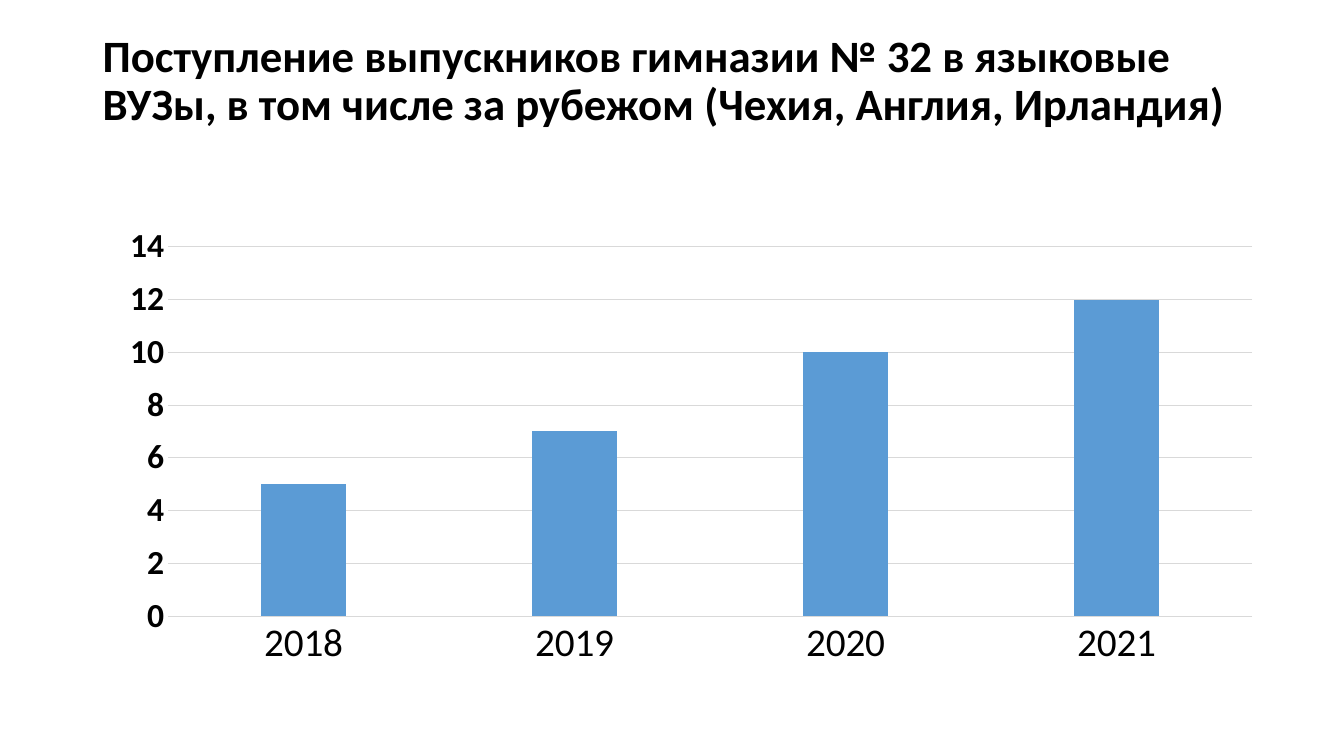
from lxml.etree import SubElement
from pptx import Presentation
from pptx.chart.data import CategoryChartData
from pptx.dml.color import RGBColor
from pptx.enum.chart import XL_CHART_TYPE, XL_TICK_MARK
from pptx.enum.text import MSO_ANCHOR
from pptx.oxml.ns import qn
from pptx.util import Inches, Pt

BLACK = RGBColor(0x00, 0x00, 0x00)
GRID_GREY = RGBColor(0xD9, 0xD9, 0xD9)
BAR_BLUE = RGBColor(0x5B, 0x9B, 0xD5)

TITLE = ("Поступление выпускников гимназии № 32 в языковые ВУЗы, "
         "в том числе за рубежом (Чехия, Англия, Ирландия)")
ADMISSIONS = {"2018": 5, "2019": 7, "2020": 10, "2021": 12}
PLOT_AREA = {"x": 0.065, "y": 0.094, "w": 0.935, "h": 0.769}


class SlideBuilder:
    """Holds the style and the current slide; boxes are shares of its size."""

    font_name = "Calibri"

    def __init__(self, prs):
        self.width, self.height = prs.slide_width, prs.slide_height
        self.s = prs.slides.add_slide(prs.slide_layouts[6])

    def place(self, x, y, w, h):
        return (int(x * self.width), int(y * self.height),
                int(w * self.width), int(h * self.height))

    def style(self, font, size, bold=False):
        font.name = self.font_name
        font.size = Pt(size)
        font.bold = bold
        font.color.rgb = BLACK

    def title(self, text, box):
        tf = self.s.shapes.add_textbox(*self.place(*box)).text_frame
        tf.word_wrap = True
        tf.vertical_anchor = MSO_ANCHOR.MIDDLE
        p = tf.paragraphs[0]
        p.text = text
        p.line_spacing = 0.9
        self.style(p.font, 32, bold=True)

    def column_chart(self, values, box):
        data = CategoryChartData()
        data.categories = list(values)
        data.add_series("Series 1", list(values.values()))
        chart = self.s.shapes.add_chart(
            XL_CHART_TYPE.COLUMN_CLUSTERED, *self.place(*box), data).chart
        chart.has_title = False
        chart.has_legend = False
        self.style(chart.font, 10)

        plot = chart.plots[0]
        plot.gap_width = 219
        plot.overlap = -27
        plot.vary_by_categories = False
        fill = plot.series[0].format.fill
        fill.solid()
        fill.fore_color.rgb = BAR_BLUE

        years, counts = chart.category_axis, chart.value_axis
        self.axis(years, 28)
        self.axis(counts, 24, bold=True)
        self.grey_line(years.format.line)
        counts.format.line.fill.background()
        counts.minimum_scale, counts.maximum_scale = 0, 14
        counts.major_unit = 2
        counts.has_major_gridlines = True
        self.grey_line(counts.major_gridlines.format.line)
        self.fix_plot_area(chart)

    def axis(self, axis, size, bold=False):
        axis.major_tick_mark = axis.minor_tick_mark = XL_TICK_MARK.NONE
        self.style(axis.tick_labels.font, size, bold)

    def grey_line(self, line):
        line.color.rgb = GRID_GREY
        line.width = Pt(0.75)

    def fix_plot_area(self, chart):
        """Set the inner plot area as shares of the chart frame."""
        area = chart._chartSpace.find(".//" + qn("c:plotArea"))
        for old in area.findall(qn("c:layout")):
            area.remove(old)
        layout = SubElement(area, qn("c:layout"))
        area.insert(0, layout)
        manual = SubElement(layout, qn("c:manualLayout"))
        settings = {"layoutTarget": "inner", "xMode": "edge", "yMode": "edge",
                    **PLOT_AREA}
        for tag, value in settings.items():
            SubElement(manual, qn("c:" + tag)).set("val", str(value))


def main():
    prs = Presentation()
    prs.slide_width, prs.slide_height = Inches(13.33), Inches(7.5)
    slide = SlideBuilder(prs)
    slide.title(TITLE, (0.069, 0.037, 0.863, 0.143))
    slide.column_chart(ADMISSIONS, (0.069, 0.267, 0.863, 0.635))
    prs.save("out.pptx")


if __name__ == "__main__":
    main()
